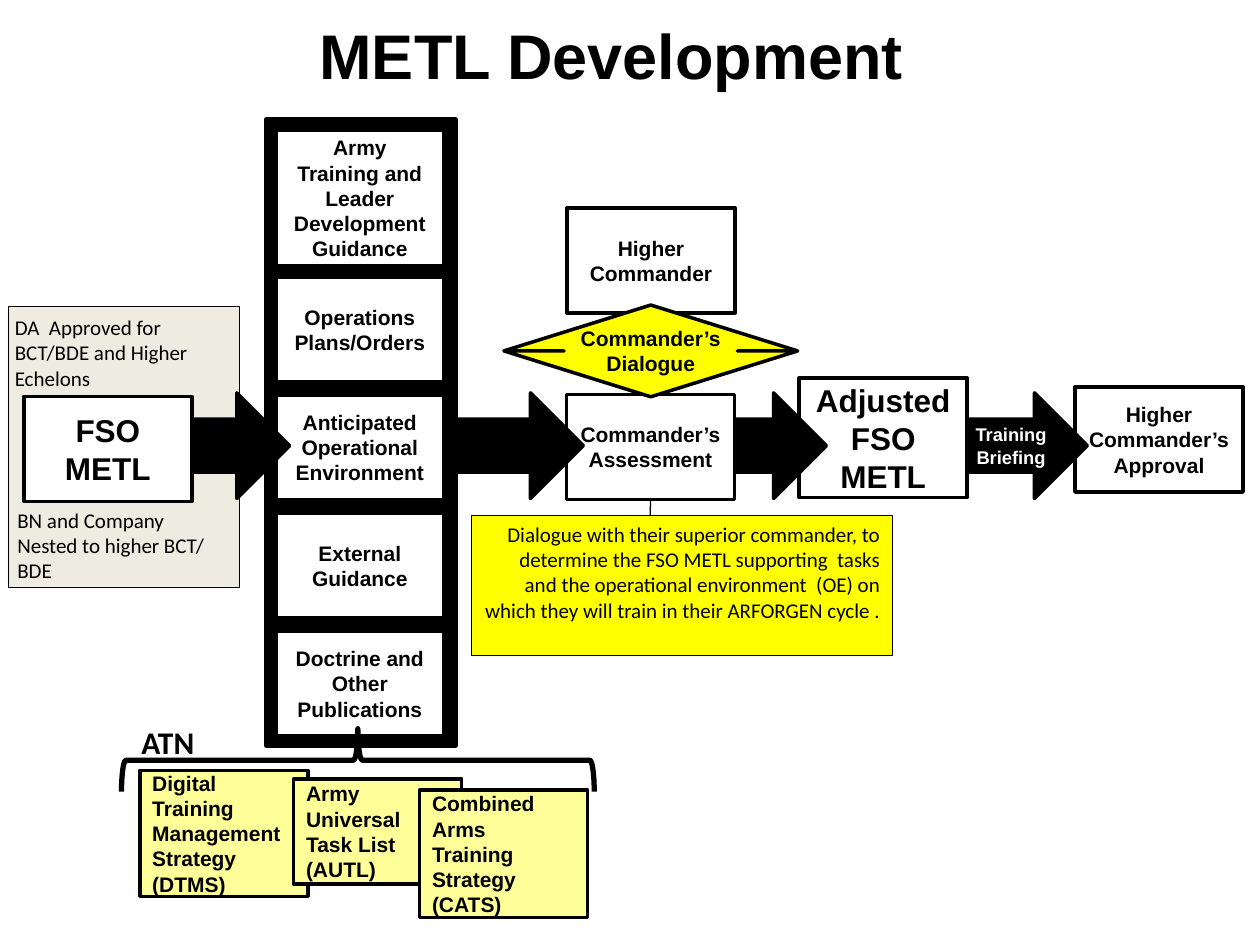
from pptx import Presentation
from pptx.dml.color import RGBColor
from pptx.enum.shapes import MSO_CONNECTOR, MSO_SHAPE
from pptx.enum.text import MSO_ANCHOR, MSO_AUTO_SIZE, PP_ALIGN
from pptx.oxml.ns import qn
from pptx.util import Cm, Pt

RECT, ARROW = MSO_SHAPE.RECTANGLE, MSO_SHAPE.RIGHT_ARROW
UP_DOWN, BRACE = MSO_SHAPE.UP_DOWN_ARROW, MSO_SHAPE.RIGHT_BRACE
STRAIGHT = MSO_CONNECTOR.STRAIGHT
LEFT, CENTER, RIGHT = PP_ALIGN.LEFT, PP_ALIGN.CENTER, PP_ALIGN.RIGHT
TOP, MIDDLE = MSO_ANCHOR.TOP, MSO_ANCHOR.MIDDLE
FIT, FIXED = MSO_AUTO_SIZE.SHAPE_TO_FIT_TEXT, MSO_AUTO_SIZE.NONE

THEME = {
    "black": "000000", "white": "FFFFFF", "beige": "EEECE1",
    "yellow": "FFFF00", "pale": "FFFF99",
    "head": "Arial", "body": "Calibri",
    "title": 36, "large": 18, "normal": 12, "small": 10.5,
    "thick": 3, "medium": 2, "thin": 0.75, "hair": 0.25,
}

# Content, with positions in cm
BOX_W, BOX_H = 3.39, 2.12
ROW_Y = 7.95
ARROW_Y, ARROW_W, ARROW_H = 7.92, 2.54, 2.13

TITLE = "METL Development "
GUIDANCE_FIRST = ["Army", "Training and Leader Development Guidance"]
GUIDANCE = [
    ["Operations Plans/Orders"],
    ["Anticipated Operational Environment"],
    ["External Guidance"],
    ["Doctrine and Other Publications"],
]
GUIDANCE_X, GUIDANCE_Y, GUIDANCE_PITCH = 5.56, 5.58, 2.38
ATN_CARDS = [  # text, left, top, height
    (["Digital Training Management Strategy (DTMS)"], 2.82, 15.53, 2.54),
    (["Army Universal Task List (AUTL)"], 5.92, 15.7, BOX_H),
    (["Combined Arms", "Training Strategy (CATS)"], 8.46, 15.93, 2.57),
]
LEVEL_NOTES = [  # text, left, top, width
    (["DA  Approved for", "BCT/BDE and Higher", "Echelons"], 0.05, 6.22, 4.67),
    (["BN and Company", "Nested to higher BCT/", "BDE"], 0.1, 10.1, 4.72),
]
DIALOGUE_NOTE = ["Dialogue with their superior commander, to determine the FSO METL "
                 "supporting  tasks and the operational environment  (OE) on which "
                 "they will train in their ARFORGEN cycle ."]

prs = Presentation()
prs.slide_width, prs.slide_height = Cm(25.4), Cm(19.05)
slide = prs.slides.add_slide(prs.slide_layouts[6])


def color(name):
    return RGBColor.from_string(THEME[name])


def write(owner, paragraphs, size="normal", face="head", ink="black", bold=True,
          align=CENTER, anchor=MIDDLE, wrap=True, fit=FIXED):
    frame = owner.text_frame
    frame_format = {"word_wrap": wrap, "auto_size": fit, "vertical_anchor": anchor}
    for name, value in frame_format.items():
        setattr(frame, name, value)
    font_format = {"name": THEME[face], "size": Pt(THEME[size]), "bold": bold}
    for index, text in enumerate(paragraphs):
        paragraph = frame.add_paragraph() if index else frame.paragraphs[0]
        paragraph.text = text
        paragraph.alignment = align
        for run in paragraph.runs:
            for name, value in font_format.items():
                setattr(run.font, name, value)
            run.font.color.rgb = color(ink)


def add_shape(kind, x, y, w, h, fill="white", line="medium", paragraphs=(), **style):
    shape = slide.shapes.add_shape(kind, Cm(x), Cm(y), Cm(w), Cm(h))
    shape.shadow.inherit = False
    if fill:
        shape.fill.solid()
        shape.fill.fore_color.rgb = color(fill)
    else:
        shape.fill.background()
    shape.line.color.rgb = color("black")
    shape.line.width = Pt(THEME[line])
    write(shape, paragraphs, **style)
    return shape


def add_box(paragraphs, x, y=ROW_Y, h=BOX_H, **style):
    return add_shape(RECT, x, y, BOX_W, h, paragraphs=paragraphs, **style)


def add_arrow(x, w=ARROW_W, **style):
    return add_shape(ARROW, x, ARROW_Y, w, ARROW_H, fill="black", **style)


def add_label(paragraphs, x, y, w, h, **style):
    write(slide.shapes.add_textbox(Cm(x), Cm(y), Cm(w), Cm(h)), paragraphs, **style)


add_label([TITLE], 1.07, 0, 22.86, 2.18, size="title")
add_shape(RECT, 5.37, 2.41, 3.81, 12.62, fill="black", line="thick")
add_shape(RECT, 0.16, 6.17, 4.67, 5.66, fill="beige", line="hair")

# Process row, from the last step back
add_box(["Higher", "Commander’s Approval"], 21.67, 7.8)
add_arrow(19.38, paragraphs=["Training Briefing"], size="small", ink="white")
add_box(["Adjusted\vFSO", "METL"], 16.11, 7.62, 2.41, size="large")
add_arrow(14.12)
assessment = add_box(["Commander’s Assessment"], 11.42)
add_arrow(8.53, 3.23)

# Guidance column
add_box(GUIDANCE_FIRST, GUIDANCE_X, 2.62, 2.74)
for row, guidance in enumerate(GUIDANCE):
    add_box(guidance, GUIDANCE_X, GUIDANCE_Y + row * GUIDANCE_PITCH)

# Higher commander and dialogue
add_box(["Higher", "Commander"], 11.43, 4.19)
dialogue = add_shape(UP_DOWN, 10.16, 6.15, 5.92, 1.85, fill="yellow",
                     paragraphs=["Commander’s", "Dialogue"])
# For this shape the head length comes first, then the shaft width
dialogue.adjustments[0], dialogue.adjustments[1] = 0.29, 0.59

# ATN resources
brace = add_shape(BRACE, 6.58, 10.56, 1.27, 9.53, fill=None, line="thick")
brace.rotation = 270
brace.adjustments[0], brace.adjustments[1] = 0.07, 0.5
add_label(["ATN"], 2.6, 14.45, 1.78, 1.02, size="large", face="body",
          align=LEFT, anchor=TOP, wrap=False, fit=FIT)
for card, x, y, h in ATN_CARDS:
    add_box(card, x, y, h, fill="pale", align=LEFT)

# Starting point
for note, x, y, w in LEVEL_NOTES:
    add_label(note, x, y, w, 1.8, face="body", bold=False,
              align=LEFT, anchor=TOP, wrap=False, fit=FIT)
add_arrow(3.3)
add_box(["FSO", "METL"], 0.48, 7.99, size="large")

# Note on the assessment
link = slide.shapes.add_connector(STRAIGHT, Cm(13.1), Cm(10.07), Cm(13.1), Cm(10.62))
link.begin_connect(assessment, 2)
link.line.color.rgb = color("black")
link.line.width = Pt(THEME["thin"])
properties = link._element.spPr
properties.append(properties.makeelement(qn("a:effectLst"), {}))
add_shape(RECT, 9.5, 10.39, 8.5, 2.82, fill="yellow", line="thin",
          paragraphs=DIALOGUE_NOTE, face="body", bold=False, align=RIGHT, anchor=TOP)

prs.save("out.pptx")
